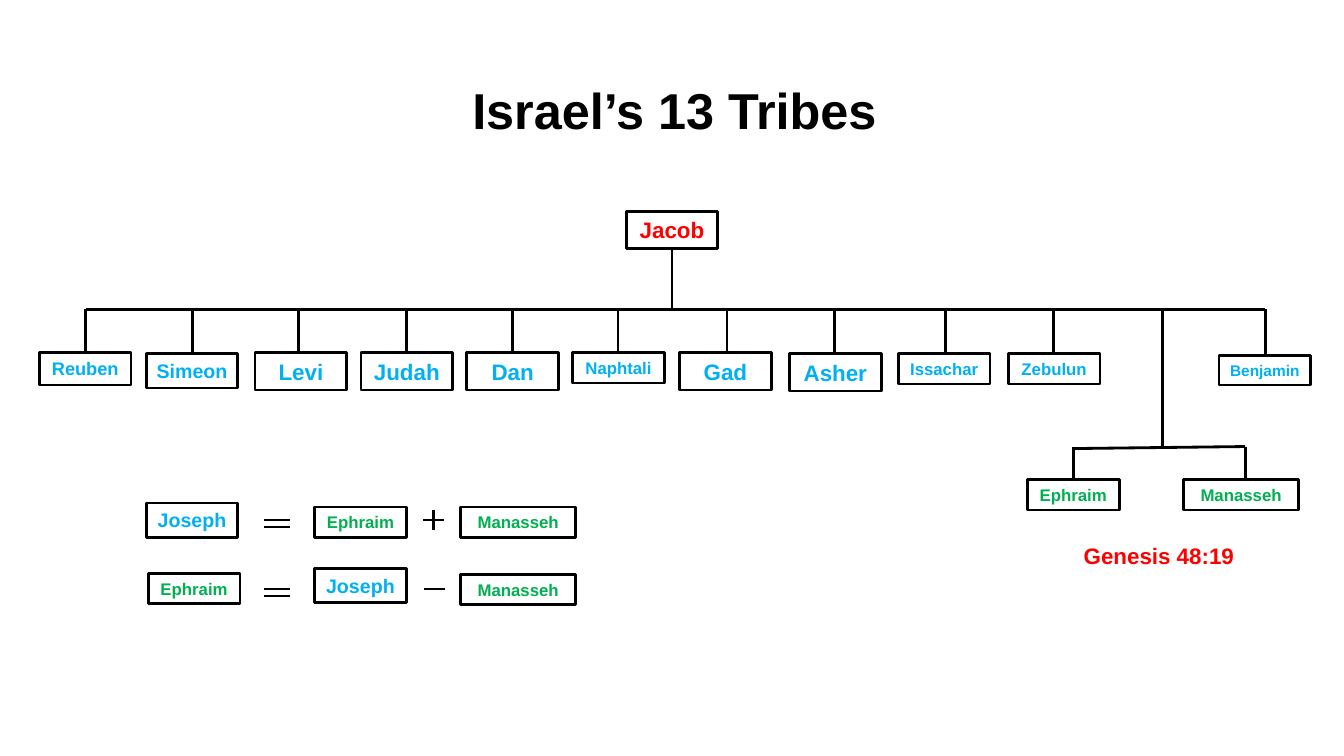
from pptx import Presentation
from pptx.dml.color import RGBColor
from pptx.enum import shapes, text
from pptx.oxml import ns
from pptx.util import Inches, Pt

THEME = {
    "font": "Arial",
    "black": RGBColor(0, 0, 0),
    "red": RGBColor(0xFF, 0, 0),
    "blue": RGBColor(0, 0xB0, 0xF0),
    "green": RGBColor(0, 0xB0, 0x50),
    "title": 36,
    "label": 16,
    "frame": 2,
    "sign": 1.5,
}
# Box height for each type size
HEIGHTS = {16: 0.37, 14: 0.34, 13: 0.32, 12: 0.3, 11: 0.29}
BOX_WIDTH = 0.91
WIDE_BOX = 1.14
BRANCH_Y = 3.07
SPLIT_Y = 4.44
GRANDSON_Y = 4.76
JACOB = (6.21, 2.1)

# name, type size, box left, box top, stem x
SONS = [
    ("Reuben", 13, 0.39, 3.5, 0.85),
    ("Simeon", 14, 1.45, 3.51, 1.91),
    ("Levi", 16, 2.53, 3.5, 2.96),
    ("Judah", 16, 3.58, 3.5, 4.03),
    ("Dan", 16, 4.63, 3.5, 5.08),
    ("Naphtali", 12, 5.68, 3.5, 6.13),
    ("Gad", 16, 6.74, 3.5, 7.21),
    ("Asher", 16, 7.83, 3.51, 8.28),
    ("Issachar", 12, 8.91, 3.51, 9.38),
    ("Zebulun", 12, 10, 3.51, 10.45),
    ("Benjamin", 11, 12.09, 3.53, 12.55),
]
JOSEPH_X = 11.53
# name, box left, box width, stem x
GRANDSONS = [
    ("Ephraim", 10.19, BOX_WIDTH, 10.65),
    ("Manasseh", 11.74, WIDE_BOX, 12.35),
]
# Each equation: its boxes (name, size, colour, left, top, width), sign centre
# (x, y), and whether the sign is a plus
EQUATIONS = [
    ([("Joseph", 14, "blue", 1.45, 4.99, BOX_WIDTH),
      ("Ephraim", 12, "green", 3.12, 5.03, BOX_WIDTH),
      ("Manasseh", 12, "green", 4.57, 5.03, WIDE_BOX)], (4.3, 5.16), True),
    ([("Ephraim", 12, "green", 1.47, 5.69, BOX_WIDTH),
      ("Joseph", 14, "blue", 3.12, 5.64, BOX_WIDTH),
      ("Manasseh", 12, "green", 4.57, 5.7, WIDE_BOX)], (4.31, 5.84), False),
]
EQUALS_X = (2.62, 2.88)
EQUALS_GAP = 0.07
SIGN_REACH = 0.1


def write(shape, wording, size, color, align):
    frame = shape.text_frame
    frame.word_wrap = True
    paragraph = frame.paragraphs[0]
    paragraph.text = wording
    paragraph.alignment = align
    font = paragraph.font
    font.name, font.size, font.bold = THEME["font"], Pt(size), True
    font.color.rgb = THEME[color]
    return frame


def add_label(slide, wording, size, color, area, align):
    shape = slide.shapes.add_textbox(*map(Inches, area))
    write(shape, wording, size, color, align)


def add_name_box(slide, name, size, color, left, top, width=BOX_WIDTH):
    area = map(Inches, (left, top, width, HEIGHTS[size]))
    shape = slide.shapes.add_shape(shapes.MSO_SHAPE.RECTANGLE, *area)
    shape.shadow.inherit = False
    shape.fill.background()
    shape.line.color.rgb = THEME["black"]
    shape.line.width = Pt(THEME["frame"])
    frame = write(shape, name, size, color, text.PP_ALIGN.CENTER)
    frame.margin_left = frame.margin_right = Inches(0.05)
    frame.vertical_anchor = text.MSO_ANCHOR.TOP


def add_line(slide, x1, y1, x2, y2, weight="frame"):
    ends = map(Inches, (x1, y1, x2, y2))
    line = slide.shapes.add_connector(shapes.MSO_CONNECTOR.STRAIGHT, *ends)
    line.line.color.rgb = THEME["black"]
    line.line.width = Pt(THEME[weight])
    properties = line._element.spPr
    properties.append(properties.makeelement(ns.qn("a:effectLst"), {}))


def add_family_tree(slide):
    add_name_box(slide, "Jacob", THEME["label"], "red", *JACOB)
    jacob_bottom = JACOB[1] + HEIGHTS[THEME["label"]]
    jacob_x = JACOB[0] + BOX_WIDTH / 2
    add_line(slide, jacob_x, jacob_bottom, jacob_x, BRANCH_Y)
    add_line(slide, SONS[-1][-1], BRANCH_Y, SONS[0][-1], BRANCH_Y)
    for name, size, left, top, stem_x in SONS:
        add_name_box(slide, name, size, "blue", left, top)
        add_line(slide, stem_x, BRANCH_Y, stem_x, top)

    add_line(slide, JOSEPH_X, BRANCH_Y, JOSEPH_X, SPLIT_Y)
    add_line(slide, GRANDSONS[1][-1], SPLIT_Y - 0.01, GRANDSONS[0][-1], SPLIT_Y + 0.01)
    for name, left, width, stem_x in GRANDSONS:
        add_name_box(slide, name, 12, "green", left, GRANDSON_Y, width)
        add_line(slide, stem_x, SPLIT_Y - 0.01, stem_x, GRANDSON_Y)


def add_equation(slide, boxes, sign, is_plus):
    for box in boxes:
        add_name_box(slide, *box)
    x, y = sign
    start, end = EQUALS_X
    for bar_y in (y, y + EQUALS_GAP):
        add_line(slide, start, bar_y, end, bar_y, "sign")
    add_line(slide, x - SIGN_REACH, y, x + SIGN_REACH, y, "sign")
    if is_plus:
        add_line(slide, x, y - SIGN_REACH, x, y + SIGN_REACH, "sign")


def main():
    presentation = Presentation()
    presentation.slide_width = Inches(13.33)
    presentation.slide_height = Inches(7.5)
    slide = presentation.slides.add_slide(presentation.slide_layouts[6])
    add_label(slide, "Israel’s 13 Tribes", THEME["title"], "black",
              (3.32, 0.74, 6.74, 0.71), text.PP_ALIGN.CENTER)
    add_family_tree(slide)
    add_label(slide, "Genesis 48:19", THEME["label"], "red",
              (10.65, 5.33, 1.9, 0.37), text.PP_ALIGN.LEFT)
    for equation in EQUATIONS:
        add_equation(slide, *equation)
    presentation.save("out.pptx")


if __name__ == "__main__":
    main()
